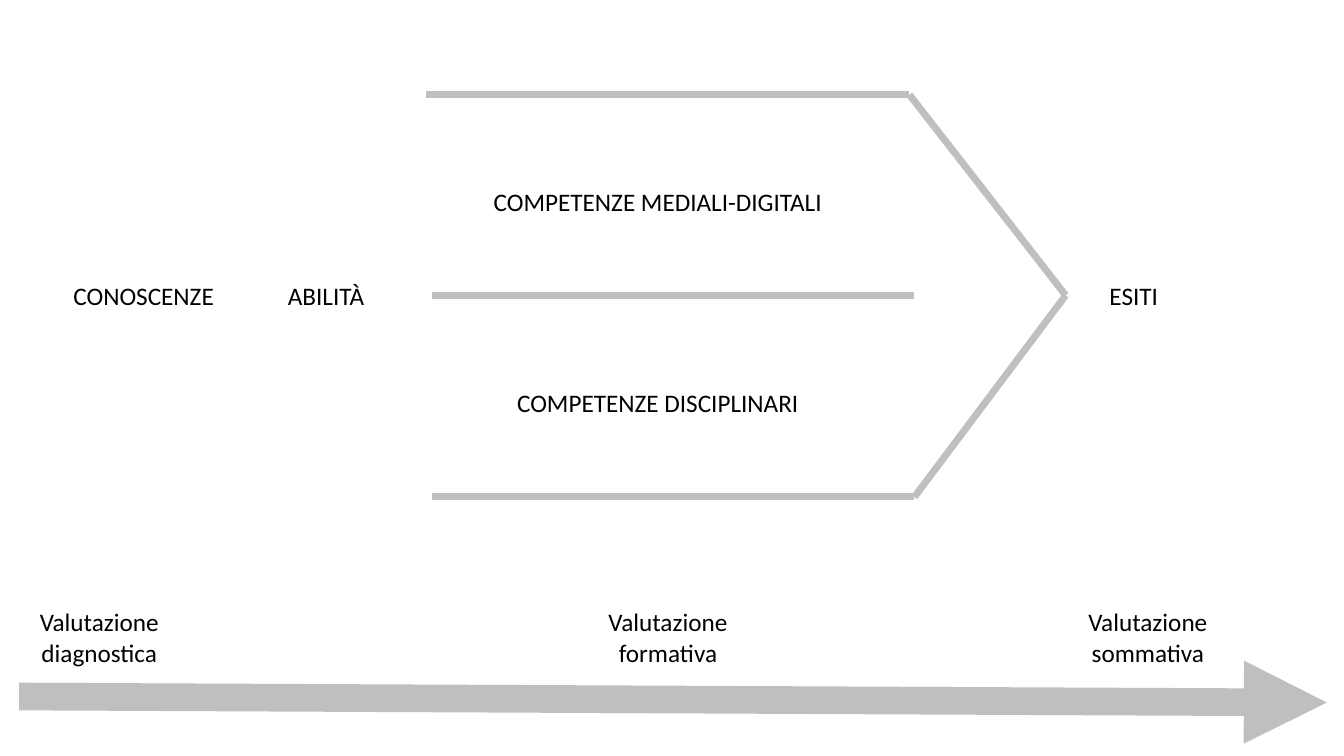
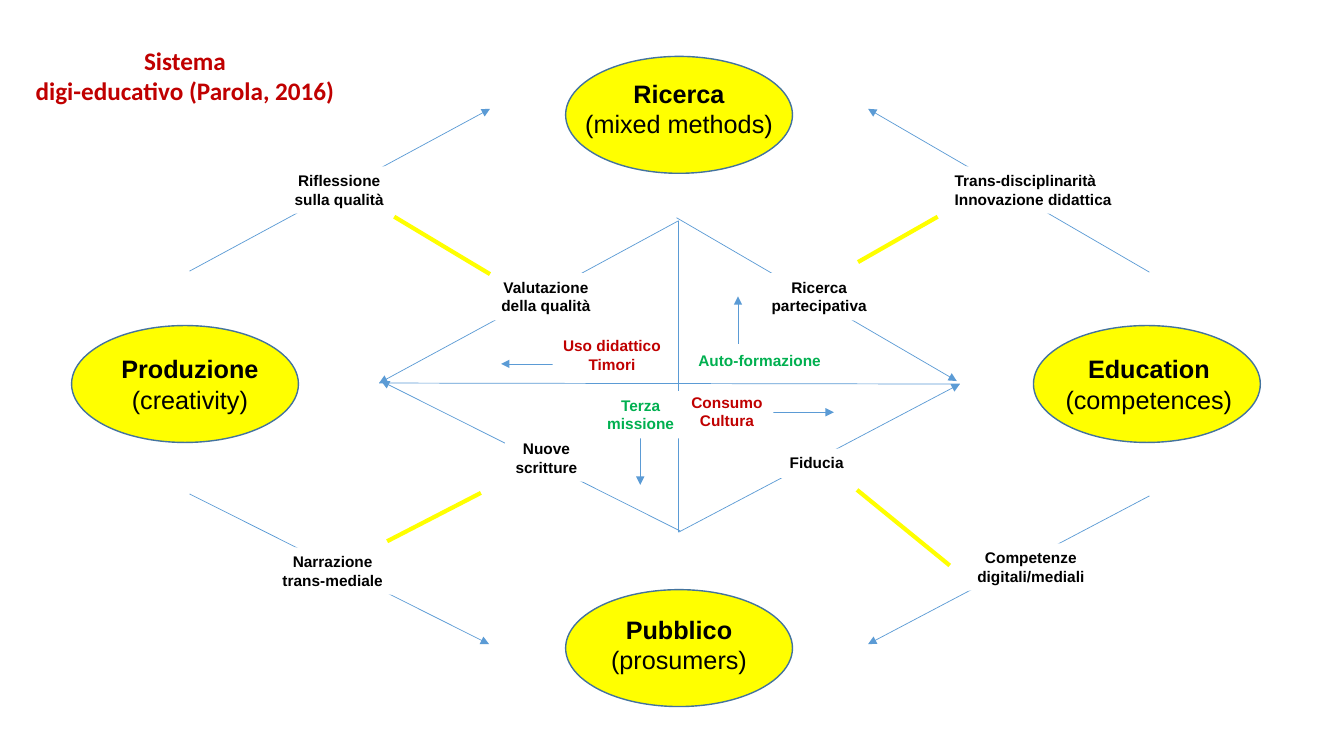
from lxml.etree import SubElement
from pptx import Presentation
from pptx.dml.color import RGBColor
from pptx.enum.shapes import MSO_CONNECTOR, MSO_SHAPE
from pptx.enum.text import MSO_ANCHOR, MSO_AUTO_SIZE, PP_ALIGN
from pptx.oxml.ns import qn
from pptx.util import Pt

# Shared scale, colours and fonts
EMU_PER_PX = 9144  # 100 px to the inch
SLIDE_WIDTH, SLIDE_HEIGHT = 1333, 750
BLACK, WHITE, GREY = "000000", "FFFFFF", "BFBFBF"
RED, GREEN, YELLOW = "C00000", "00B050", "FFFF00"
BLUE, DARK_BLUE = "5B9BD5", "43739E"
HEADING_FONT, DIAGRAM_FONT = "Calibri", "Arial"


def px(length):
    return int(length * EMU_PER_PX)


def rgb(color):
    return RGBColor.from_string(color)


def write_lines(frame, text, font, size, color=BLACK, bold=False,
                align=PP_ALIGN.CENTER):
    """Fill a frame, one paragraph for each line of the text."""
    frame.word_wrap = False
    frame.text = text
    for paragraph in frame.paragraphs:
        paragraph.alignment = align
        for run in paragraph.runs:
            run.font.name = font
            run.font.size = Pt(size)
            run.font.bold = bold
            run.font.color.rgb = rgb(color)


def add_label(slide, box, text, font=HEADING_FONT, size=18, fill=None, **style):
    label = slide.shapes.add_textbox(*map(px, box))
    if fill:
        label.fill.solid()
        label.fill.fore_color.rgb = rgb(fill)
    write_lines(label.text_frame, text, font, size, **style)


def add_line(slide, start, end, color, weight, arrow=False):
    line = slide.shapes.add_connector(
        MSO_CONNECTOR.STRAIGHT, *map(px, (*start, *end)))
    line.line.color.rgb = rgb(color)
    line.line.width = Pt(weight)
    if arrow:
        SubElement(line.line._get_or_add_ln(), qn("a:tailEnd"), type="triangle")
    SubElement(line._element.spPr, qn("a:effectLst"))


def add_lines(slide, left, top, ends, color, weight, arrow=False):
    """Draw lines whose ends are offsets from the region's corner."""
    for x1, y1, x2, y2 in ends:
        add_line(slide, (left + x1, top + y1), (left + x2, top + y2),
                 color, weight, arrow)


# Slide 1: path from knowledge to outcomes
def draw_assessment_timeline(slide, left, top, width):
    add_line(slide, (left, top + 94), (left + width, top + 100),
             GREY, 19.75, arrow=True)
    for offset, phase in ((7, "diagnostica"), (571, "formativa"),
                          (1047, "sommativa")):
        add_label(slide, (left + offset, top, 145, 71), f"Valutazione\n{phase}")


def draw_competence_lanes(slide, left, top, width, height):
    lane_width, tip = 479, (left + width, top + height // 2)
    for row, indent in enumerate((0, 5, 5)):
        y = top + row * height // 2
        lane_end = (left + indent + lane_width, y)
        add_line(slide, (left + indent, y), lane_end, GREY, 5)
        if row != 1:
            add_line(slide, lane_end, tip, GREY, 5)
    for row, area in enumerate(("MEDIALI-DIGITALI", "DISCIPLINARI")):
        add_label(slide, (left + 52, top + 86 + row * height // 2, 355, 40),
                  f"COMPETENZE {area}")


def draw_stages(slide, left, top):
    for offset, width, stage in ((0, 161, "CONOSCENZE"), (213, 97, "ABILITÀ"),
                                 (1028, 69, "ESITI")):
        add_label(slide, (left + offset, top, width, 40), stage)


def build_path_slide(deck):
    slide = deck.slides.add_slide(deck.slide_layouts[6])
    draw_assessment_timeline(slide, 19, 597, 1297)
    draw_stages(slide, 62, 273)
    draw_competence_lanes(slide, 423, 94, 634, 399)


# Slide 2: digital education system
def place_title(slide, box, text):
    title = slide.shapes.title
    title.left, title.top, title.width, title.height = map(px, box)
    frame = title.text_frame
    write_lines(frame, text, HEADING_FONT, 18, RED, bold=True)
    frame.auto_size = MSO_AUTO_SIZE.NONE
    frame.vertical_anchor = MSO_ANCHOR.TOP


def draw_pole(slide, box, name, detail, shift_right, shift_up):
    pole = slide.shapes.add_shape(MSO_SHAPE.OVAL, *map(px, box))
    pole.shadow.inherit = False
    pole.fill.solid()
    pole.fill.fore_color.rgb = rgb(YELLOW)
    pole.line.color.rgb = rgb(DARK_BLUE)
    pole.line.width = Pt(1)
    frame = pole.text_frame
    write_lines(frame, f"{name}\n{detail}", DIAGRAM_FONT, 18)
    frame.paragraphs[0].runs[0].font.bold = True
    frame.vertical_anchor = MSO_ANCHOR.MIDDLE
    frame.margin_right = frame.margin_top = 0
    frame.margin_left, frame.margin_bottom = px(2 * shift_right), px(2 * shift_up)


def draw_tags(slide, left, top, tags):
    """Place white tags; one or two lines of text set the height."""
    for x, y, width, text, color, align in tags:
        height = 47 if "\n" in text else 29
        add_label(slide, (left + x, top + y, width, height), text, DIAGRAM_FONT,
                  11, fill=WHITE, color=color, bold=True, align=align)


def draw_outer_cycle(slide, left, top):
    # Four poles
    poles = ((490, 0, "Ricerca", "(mixed methods)", 0, 6),
             (0, 267, "Produzione", "(creativity)", 5, 0),
             (954, 267, "Education", "(competences)", 2, 0),
             (490, 529, "Pubblico", "(prosumers)", 0, 4))
    for x, y, name, detail, shift_right, shift_up in poles:
        draw_pole(slide, (left + x, top + y, 225, 116), name, detail,
                  shift_right, shift_up)
    # Arrows towards the top and bottom poles
    add_lines(slide, left, top, (
        (117, 213, 415, 52), (117, 434, 414, 583),
        (1069, 214, 790, 52), (1069, 436, 790, 583)), BLUE, 0.5, arrow=True)
    draw_tags(slide, left, top, (
        (210, 109, 111, "Riflessione\nsulla qualità", BLACK, PP_ALIGN.CENTER),
        (866, 109, 177, "Trans-disciplinarità\nInnovazione didattica", BLACK,
         PP_ALIGN.LEFT),
        (199, 487, 120, "Narrazione\ntrans-mediale", BLACK, PP_ALIGN.CENTER),
        (888, 483, 127, "Competenze\ndigitali/mediali", BLACK, PP_ALIGN.CENTER)))
    # Links from the outer tags to the inner diamond
    add_lines(slide, left, top, (
        (320, 159, 415, 216), (313, 481, 406, 433),
        (859, 159, 780, 204), (871, 505, 779, 430)), YELLOW, 3)


def draw_inner_diamond(slide, left, top):
    # Sides, axes and the short arrows inside the quadrants
    sides = ((297, 0, 0, 161), (299, 308, 2, 159),
             (297, 309, 576, 162), (295, -3, 573, 159))
    axes = ((0, 161, 576, 162), (297, 0, 297, 309))
    pointers = ((175, 142, 121, 142), (356, 122, 356, 75),
                (390, 190, 451, 190), (259, 216, 259, 262))
    add_lines(slide, left, top, sides + pointers, BLUE, 0.5, arrow=True)
    add_lines(slide, left, top, axes, BLUE, 0.5)
    draw_tags(slide, left, top, [(*tag, PP_ALIGN.CENTER) for tag in (
        (111, 52, 109, "Valutazione\ndella qualità", BLACK),
        (379, 52, 115, "Ricerca\npartecipativa", BLACK),
        (125, 212, 82, "Nuove\nscritture", BLACK),
        (397, 226, 74, "Fiducia", BLACK),
        (299, 166, 92, "Consumo\nCultura", RED),
        (172, 110, 118, "Uso didattico\nTimori", RED),
        (306, 124, 143, "Auto-formazione", GREEN),
        (216, 169, 87, "Terza\nmissione", GREEN))])


def build_system_slide(deck):
    slide = deck.slides.add_slide(deck.slide_layouts[5])
    place_title(slide, (24, 40, 319, 71),
                "Sistema\ndigi-educativo (Parola, 2016)")
    draw_outer_cycle(slide, 71, 56)
    draw_inner_diamond(slide, 376, 219)


def main():
    deck = Presentation()
    deck.slide_width, deck.slide_height = px(SLIDE_WIDTH), px(SLIDE_HEIGHT)
    build_path_slide(deck)
    build_system_slide(deck)
    deck.save("out.pptx")


if __name__ == "__main__":
    main()
